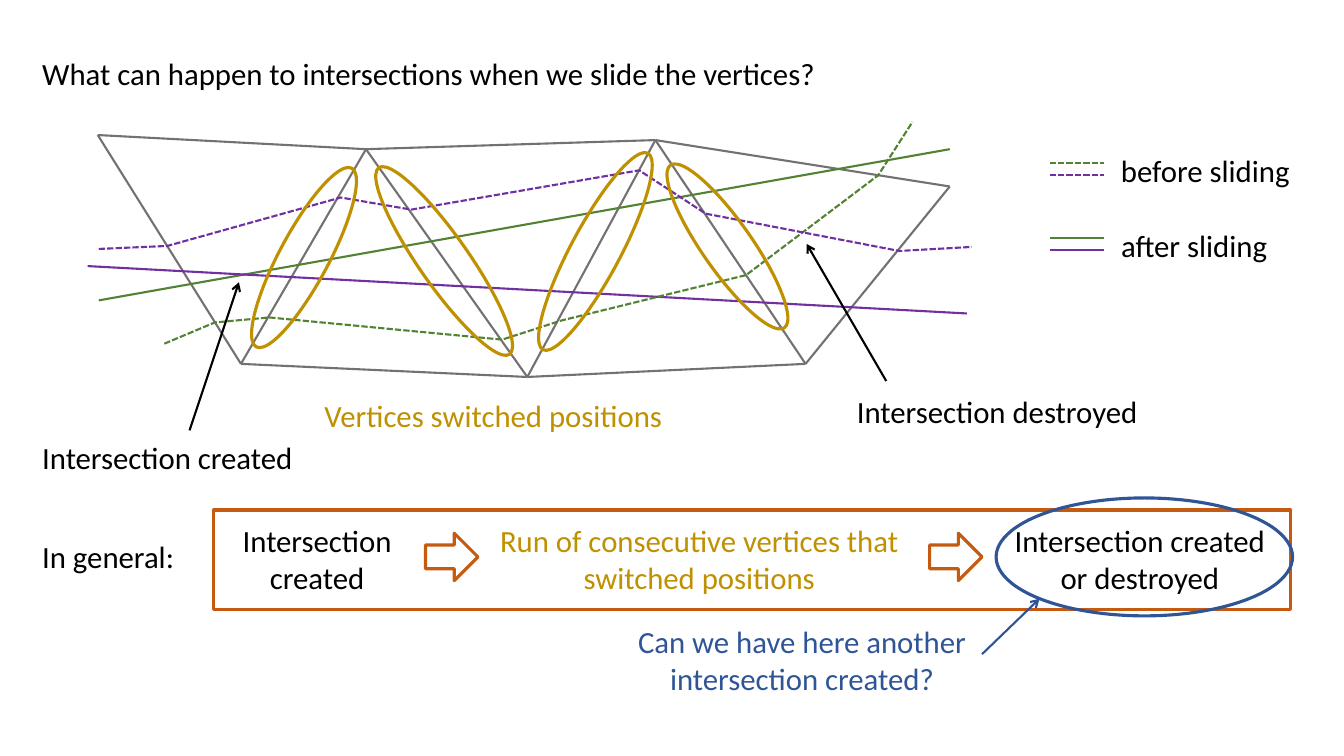
"""Build a slide on how sliding vertices makes and breaks intersections."""
from dataclasses import dataclass
from typing import Optional

import lxml.etree
import pptx
import pptx.dml.color
import pptx.enum.dml
import pptx.enum.shapes
import pptx.enum.text
import pptx.oxml.ns
import pptx.util

Inches = pptx.util.Inches
Kind = pptx.enum.shapes.MSO_SHAPE
Point = tuple[float, float]

COLORS = {
    "gray": "767171", "green": "548235", "purple": "7030A0", "gold": "BF9000",
    "black": "000000", "blue": "2F5597", "orange": "C55A11", "white": "FFFFFF",
}


@dataclass
class Line:
    start: Point
    end: Point
    color: str
    dashed: bool = False
    arrow: bool = False


@dataclass
class Curve:
    points: list[Point]
    color: str


@dataclass
class Form:
    kind: Kind
    left: float
    top: float
    width: float
    height: float
    color: str
    turn: float = 0
    fill: Optional[str] = None


@dataclass
class Label:
    text: str
    left: float
    top: float
    width: float
    color: str = "black"
    center: bool = False


TOP = [(0.97, 1.34), (3.63, 1.48), (6.5, 1.39), (9.42, 1.85)]
BASE = [(2.39, 3.61), (5.23, 3.74), (7.99, 3.61)]
EDGES = [*zip(TOP, TOP[1:]), *zip(BASE, BASE[1:]), *zip(TOP, BASE), *zip(TOP[1:], BASE)]

SLID = [
    Line((9.42, 1.48), (0.98, 2.98), "green"),
    Line((9.59, 3.11), (0.87, 2.64), "purple"),
]
CURVES = [
    Curve([(1.63, 3.41), (2.13, 3.2), (2.67, 3.15), (4.98, 3.37),
           (5.57, 3.18), (7.4, 2.73), (8.71, 1.74), (9.05, 1.21)], "green"),
    Curve([(0.98, 2.47), (1.66, 2.44), (3.38, 1.96), (4.08, 2.08),
           (6.34, 1.69), (7, 2.12), (8.92, 2.49), (9.64, 2.45)], "purple"),
]
KEYS = [
    Line((10.41, top + gap), (10.95, top + gap), color, dashed)
    for top, dashed in ((1.62, True), (2.36, False))
    for gap, color in ((0, "green"), (0.12, "purple"))
]
ARROWS = [
    Line((1.88, 4.27), (2.37, 2.8), "black", arrow=True),
    Line((8.79, 3.78), (8, 2.42), "black", arrow=True),
    Line((9.74, 6.49), (10.31, 5.94), "blue", arrow=True),
]
RINGS = [
    Form(Kind.OVAL, left, top, 0.49, height, "gold", turn)
    for left, top, height, turn in (
        (2.77, 1.55, 2.01, 28.1), (4.16, 1.46, 2.26, 325),
        (5.66, 1.39, 2.21, 28.1), (6.97, 1.46, 1.97, 325))
]
FRAMES = [
    *(Form(Kind.RIGHT_ARROW, left, 5.29, 0.52, 0.47, "orange", fill="white")
      for left in (4.22, 9.22)),
    Form(Kind.RECTANGLE, 2.12, 5.06, 10.68, 0.99, "orange"),
    Form(Kind.OVAL, 9.88, 4.94, 2.94, 1.17, "blue"),
]
LABELS = [
    Label("What can happen to intersections when we slide the vertices?", 0.32, 0.49, 8.73),
    Label("before sliding", 11.02, 1.46, 2.13),
    Label("after sliding", 11.02, 2.2, 1.99),
    Label("Intersection created", 0.32, 4.3, 3.13),
    Label("Vertices switched positions", 3.12, 3.89, 4.17, "gold"),
    Label("Intersection destroyed", 8.4, 3.85, 3.3),
    Label("In general:", 0.32, 5.29, 1.72),
    Label("Intersection created", 2.12, 5.13, 2.05, center=True),
    Label("Run of consecutive vertices that switched positions",
          4.78, 5.13, 4.31, "gold", True),
    Label("Intersection created or destroyed", 9.91, 5.13, 2.79, center=True),
    Label("Can we have here another intersection created?",
          6.02, 6.13, 3.87, "blue", True),
]


def shade(name: str) -> pptx.dml.color.RGBColor:
    return pptx.dml.color.RGBColor.from_string(COLORS[name])


def stroke(item, color: str, width: float, dashed: bool = False) -> None:
    item.line.color.rgb = shade(color)
    item.line.width = pptx.util.Pt(width)
    if dashed:
        item.line.dash_style = pptx.enum.dml.MSO_LINE.SQUARE_DOT


def draw_line(shapes, line: Line) -> None:
    ends = [Inches(value) for value in (*line.start, *line.end)]
    item = shapes.add_connector(pptx.enum.shapes.MSO_CONNECTOR.STRAIGHT, *ends)
    stroke(item, line.color, 1.5, line.dashed)
    if line.arrow:
        tail = lxml.etree.SubElement(item.line._get_or_add_ln(), pptx.oxml.ns.qn("a:tailEnd"))
        tail.set("type", "arrow")
    lxml.etree.SubElement(item._element.spPr, pptx.oxml.ns.qn("a:effectLst"))


def draw_curve(shapes, curve: Curve) -> None:
    first, *rest = [(Inches(x), Inches(y)) for x, y in curve.points]
    pen = shapes.build_freeform(*first)
    pen.add_line_segments(rest, close=False)
    item = pen.convert_to_shape()
    item.shadow.inherit = False
    item.fill.background()
    stroke(item, curve.color, 1.5, True)


def draw_form(shapes, form: Form) -> None:
    frame = [Inches(value) for value in (form.left, form.top, form.width, form.height)]
    item = shapes.add_shape(form.kind, *frame)
    item.rotation = form.turn
    item.shadow.inherit = False
    if form.fill:
        item.fill.solid()
        item.fill.fore_color.rgb = shade(form.fill)
    else:
        item.fill.background()
    stroke(item, form.color, 2.25)


def draw_label(shapes, label: Label) -> None:
    height = 0.84 if label.center else 0.47
    frame = [Inches(value) for value in (label.left, label.top, label.width, height)]
    text = shapes.add_textbox(*frame).text_frame
    text.word_wrap = True
    text.auto_size = pptx.enum.text.MSO_AUTO_SIZE.SHAPE_TO_FIT_TEXT
    text.text = label.text
    words = text.paragraphs[0]
    if label.center:
        words.alignment = pptx.enum.text.PP_ALIGN.CENTER
    font = words.runs[0].font
    font.name = "Calibri"
    font.size = pptx.util.Pt(22)
    font.color.rgb = shade(label.color)


def main() -> None:
    deck = pptx.Presentation()
    deck.slide_width, deck.slide_height = Inches(13.33), Inches(7.5)
    shapes = deck.slides.add_slide(deck.slide_layouts[6]).shapes
    mesh = [Line(start, end, "gray") for start, end in EDGES]
    for line in mesh + SLID:
        draw_line(shapes, line)
    for curve in CURVES:
        draw_curve(shapes, curve)
    for line in KEYS:
        draw_line(shapes, line)
    for form in RINGS + FRAMES:
        draw_form(shapes, form)
    for label in LABELS:
        draw_label(shapes, label)
    for line in ARROWS:
        draw_line(shapes, line)
    deck.save("out.pptx")


if __name__ == "__main__":
    main()
